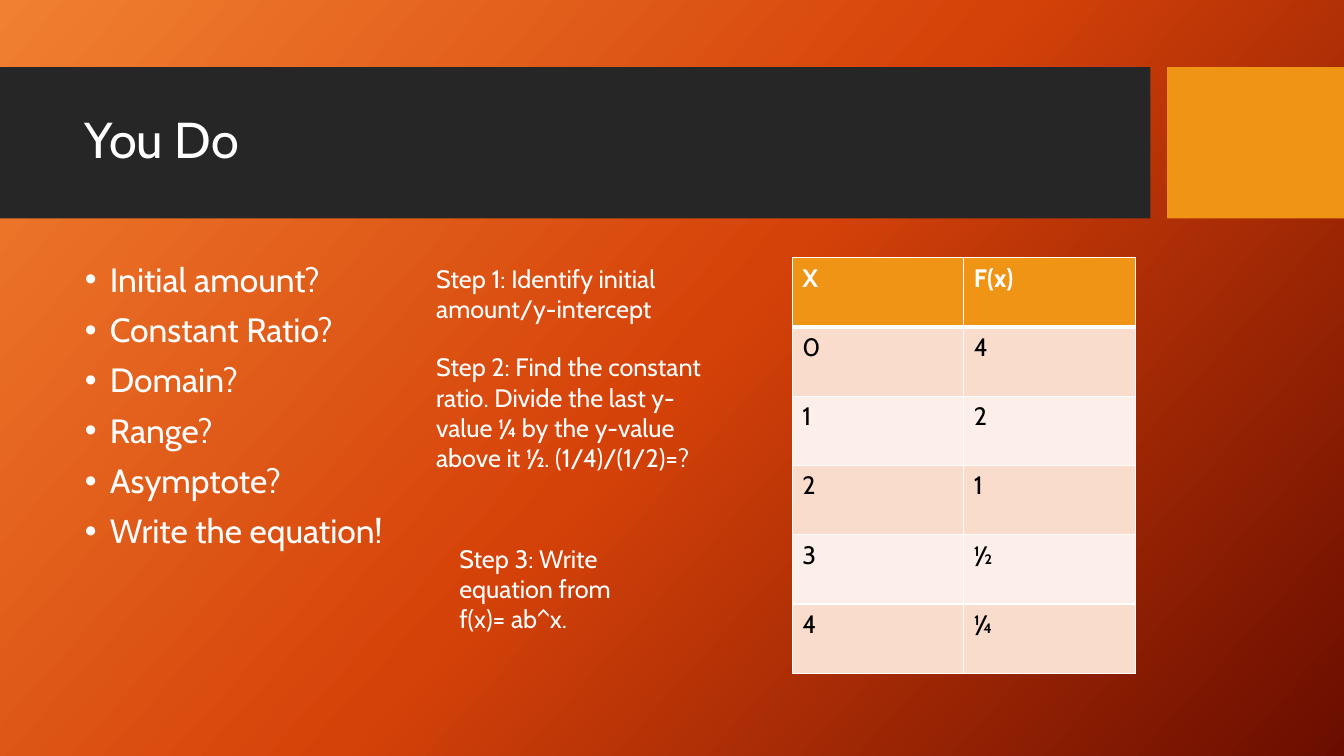
from copy import deepcopy

from lxml import etree
from pptx import Presentation
from pptx import util as u
from pptx.dml.color import RGBColor
from pptx.enum import shapes, text
from pptx.oxml.ns import qn

Pt = u.Pt
FONT = "Cabin"
WHITE, AMBER, DARK = "FFFFFF", "F09415", "262626"
GLOW = [(0, "F18031"), (0.5, "D54209"), (1, "6A0D00")]
ASKS = ["Initial amount?", "Constant Ratio?", "Domain?", "Range?",
        "Asymptote?", "Write the equation!"]
STEPS = [
    ((304.5, 184.5, 254, 51), "Step 1: Identify initial amount/y-intercept"),
    ((304.5, 247.7, 210.5, 116.6),
     "Step 2: Find the constant ratio. Divide the last y-value ¼ "
     "by the y-value above it ½. (1/4)/(1/2)=?"),
    ((321, 384.5, 133, 94), "Step 3: Write equation from f(x)= ab^x."),
]
ROWS = [("X", "F(x)"), ("0", "4"), ("1", "2"), ("2", "1"), ("3", "½"), ("4", "¼")]


def rgb(code):
    return RGBColor.from_string(code)


def style(para, size, color=WHITE, bold=False):
    font = para.font
    font.name, font.size, font.bold = FONT, Pt(size), bold
    font.color.rgb = rgb(color)


def glow(slide):
    """Fill the background with the three-stop diagonal gradient."""
    fill = slide.background.fill
    fill.gradient()
    fill.gradient_angle = 318
    first = next(slide._element.iter(qn("a:gs")))
    first.addnext(deepcopy(first))
    for stop, (pos, color) in zip(fill.gradient_stops, GLOW):
        stop.position = pos
        stop.color.rgb = rgb(color)


def band(slide, left, width, color):
    box = slide.shapes.add_shape(shapes.MSO_SHAPE.RECTANGLE,
                                 Pt(left), Pt(48), Pt(width), Pt(108))
    box.shadow.inherit = False
    box.fill.solid()
    box.fill.fore_color.rgb = rgb(color)
    box.line.fill.background()
    slide.shapes._spTree.insert(2, box._element)


def head(slide, words):
    title = slide.shapes.title
    title.left, title.top, title.width, title.height = map(Pt, (53.5, 59, 756.5, 85))
    frame = title.text_frame
    frame.text = words
    frame.vertical_anchor = text.MSO_ANCHOR.MIDDLE
    para = frame.paragraphs[0]
    para.alignment = text.PP_ALIGN.LEFT
    para.line_spacing = 0.9
    style(para, 36)


def note(slide, area, words):
    frame = slide.shapes.add_textbox(*map(Pt, area)).text_frame
    frame.word_wrap = True
    frame.text = words
    style(frame.paragraphs[0], 18)


def bullets(slide, area, items):
    frame = slide.shapes.add_textbox(*map(Pt, area)).text_frame
    frame.word_wrap = True
    frame.text = "\n".join(items)
    for i, para in enumerate(frame.paragraphs):
        props = para._p.get_or_add_pPr()
        props.set("marL", str(Pt(18)))
        props.set("indent", str(Pt(-18)))
        etree.SubElement(props, qn("a:buFont"), typeface="Arial")
        etree.SubElement(props, qn("a:buChar"), char="•")
        para.line_spacing = 0.9
        para.space_before = Pt(10 if i else 0)
        style(para, 24)


def edge(cell, side, width):
    line = etree.SubElement(cell._tc.get_or_add_tcPr(), qn("a:ln" + side),
                            w=str(Pt(width)))
    fill = etree.SubElement(line, qn("a:solidFill"))
    etree.SubElement(fill, qn("a:srgbClr"), val=WHITE)


def grid(slide, left, top, rows):
    wide, high = 122.4, 49.44
    table = slide.shapes.add_table(
        len(rows), 2, Pt(left), Pt(top), Pt(2 * wide), Pt(high * len(rows))).table
    for col in table.columns:
        col.width = Pt(wide)
    for r, row in enumerate(rows):
        table.rows[r].height = Pt(high)
        shade = AMBER if r == 0 else ("FCEEE8", "F9DCCC")[r % 2]
        for c, words in enumerate(row):
            cell = table.cell(r, c)
            cell.text = words
            style(cell.text_frame.paragraphs[0], 18,
                  "000000" if r else WHITE, r == 0)
            for side in "LRTB":
                thick = (side, r) in (("B", 0), ("T", 1))
                edge(cell, side, 3 if thick else 1)
            cell.fill.solid()
            cell.fill.fore_color.rgb = rgb(shade)


def main():
    deck = Presentation()
    deck.slide_width, deck.slide_height = Pt(960), Pt(540)
    slide = deck.slides.add_slide(deck.slide_layouts[5])
    glow(slide)
    band(slide, 0, 821.8, DARK)
    band(slide, 833.6, 126.4, AMBER)
    head(slide, "You Do")
    bullets(slide, (53.5, 184.5, 230.5, 283.5), ASKS)
    grid(slide, 566, 184.2, ROWS)
    for area, words in STEPS:
        note(slide, area, words)
    deck.save("out.pptx")


if __name__ == "__main__":
    main()
